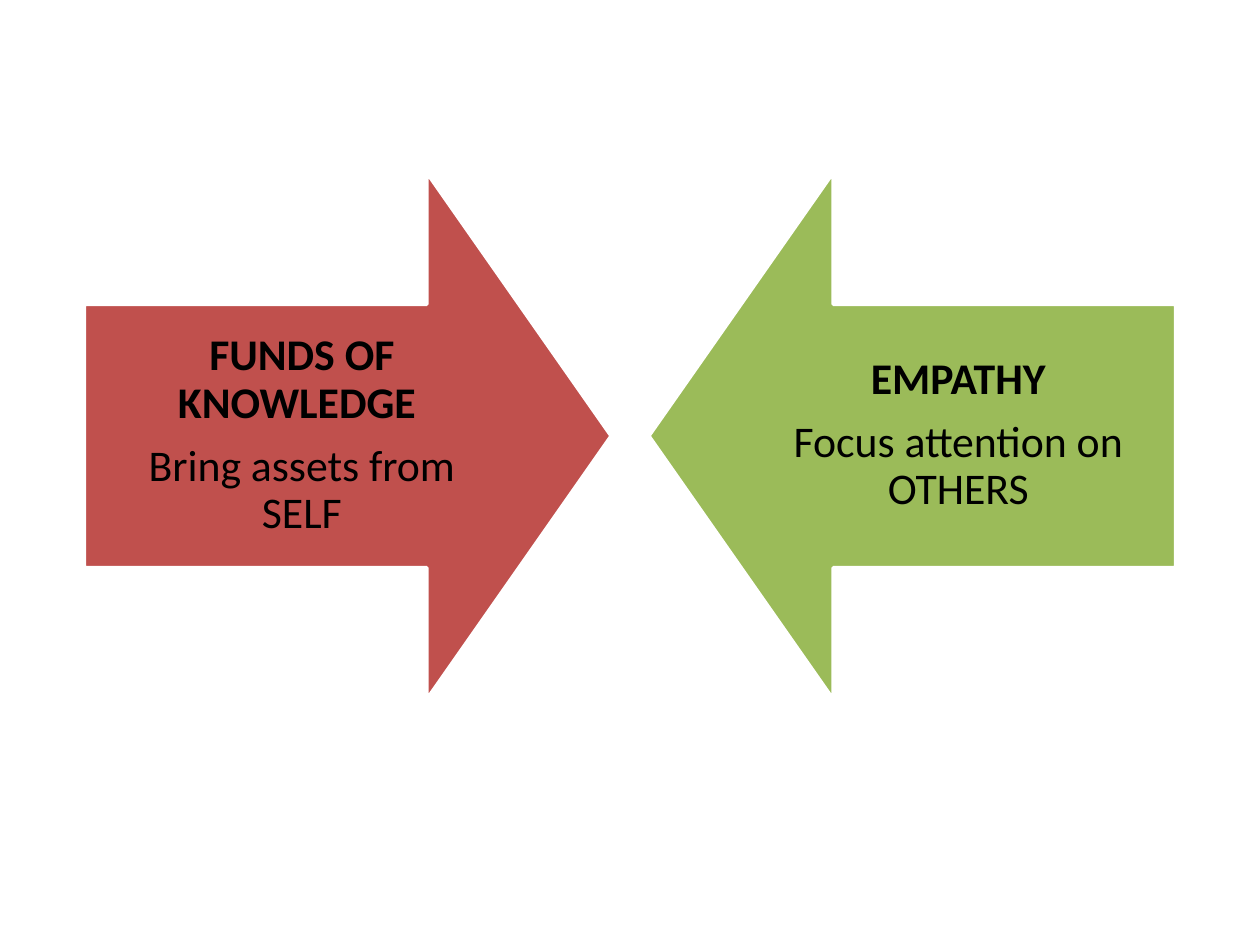
import pptx
import pptx.dml.color
import pptx.enum.shapes
import pptx.enum.text
import pptx.util

Inches = pptx.util.Inches
Pt = pptx.util.Pt


def paint(hue):
    return pptx.dml.color.RGBColor.from_string(hue)


def write(para, text, font="Calibri", size=25, hue="000000", bold=False, after=9):
    para.alignment = pptx.enum.text.PP_ALIGN.CENTER
    para.line_spacing = 0.9
    para.space_after = Pt(after)
    run = para.add_run()
    run.text = text
    run.font.name = font
    run.font.size = Pt(size)
    run.font.bold = bold
    run.font.color.rgb = paint(hue)


class Deck:
    """Holds the style and the current slide."""

    edge = "FFFFFF"
    inset = 0.19

    def __init__(self, wide, high):
        self.show = pptx.Presentation()
        self.show.slide_width = Inches(wide)
        self.show.slide_height = Inches(high)
        self.slide = self.show.slides.add_slide(self.show.slide_layouts[6])

    def arrow(self, left, top, side, turn, hue):
        kind = pptx.enum.shapes.MSO_SHAPE.DOWN_ARROW
        shape = self.slide.shapes.add_shape(
            kind, Inches(left), Inches(top), Inches(side), Inches(side))
        shape.adjustments[0] = 0.5
        shape.adjustments[1] = 0.35
        shape.rotation = turn
        shape.shadow.inherit = False
        shape.fill.solid()
        shape.fill.fore_color.rgb = paint(hue)
        shape.line.color.rgb = paint(self.edge)
        shape.line.width = Pt(2)

    def label(self, left, top, wide, high, head, body):
        box = self.slide.shapes.add_textbox(
            Inches(left), Inches(top), Inches(wide), Inches(high))
        frame = box.text_frame
        frame.word_wrap = True
        frame.vertical_anchor = pptx.enum.text.MSO_ANCHOR.MIDDLE
        frame.margin_left = frame.margin_right = Inches(self.inset)
        frame.margin_top = frame.margin_bottom = Inches(self.inset)
        write(frame.paragraphs[0], head, bold=True)
        write(frame.add_paragraph(), body)


def main():
    wide, edge, side, span = 10, 0.67, 4.18, 3.45
    deck = Deck(wide, 7.5)
    sides = [
        (edge, edge, 270, "C0504D", "FUNDS OF KNOWLEDGE ", "Bring assets from SELF"),
        (wide - edge - side, wide - edge - span, 90, "9BBB59",
         "EMPATHY", "Focus attention on OTHERS"),
    ]
    for left, start, turn, hue, head, body in sides:
        deck.arrow(left, 1.37, side, turn, hue)
        deck.label(start, 2.41, span, side / 2, head, body)
    deck.show.save("out.pptx")


if __name__ == "__main__":
    main()
